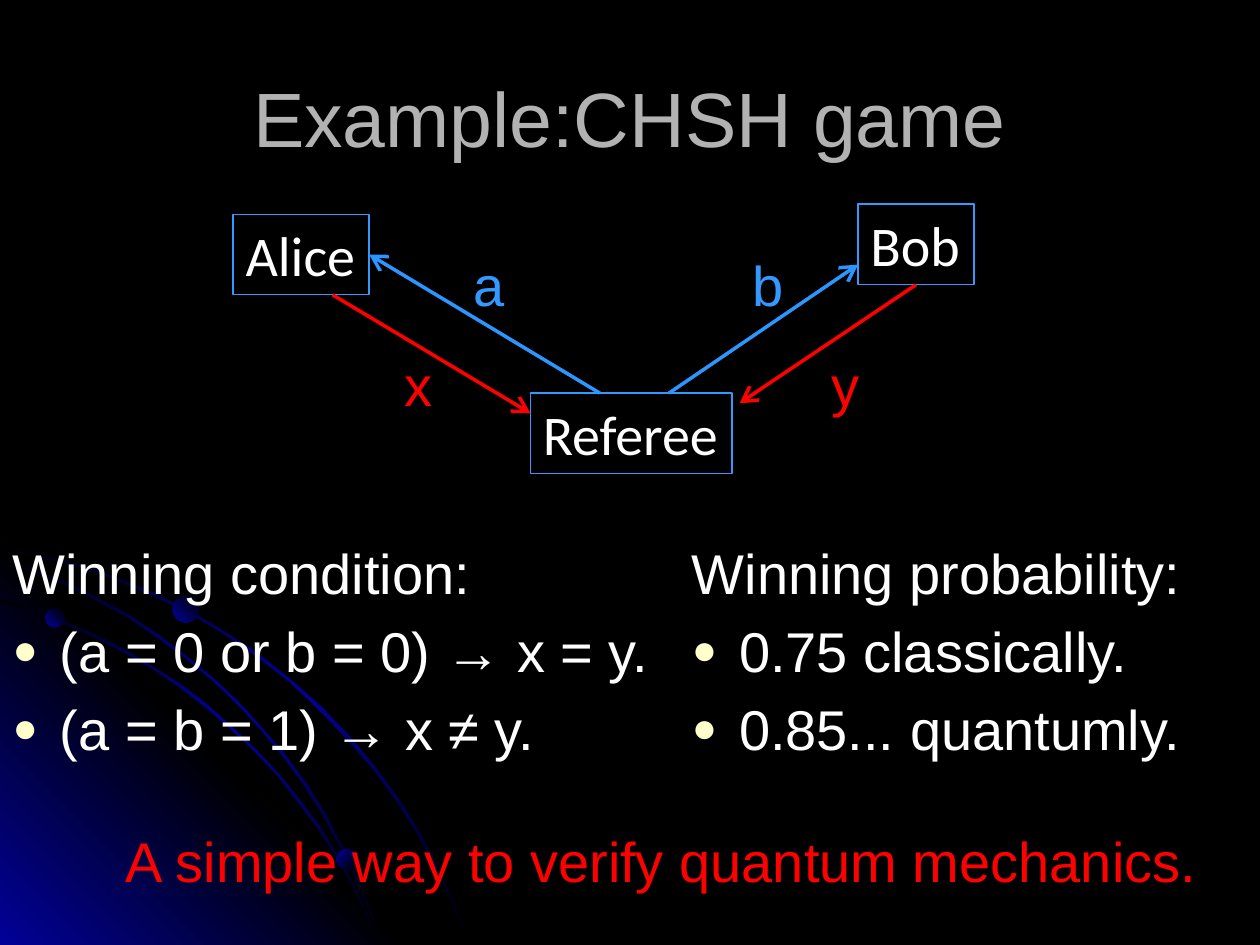
from copy import deepcopy
from dataclasses import dataclass
from math import acos, asin, cos, sin

from lxml.etree import SubElement
from pptx import Presentation
from pptx.dml.color import RGBColor as RGB
from pptx.enum.shapes import MSO_CONNECTOR as Connector, MSO_SHAPE as Preset
from pptx.enum.text import MSO_ANCHOR as Anchor, MSO_AUTO_SIZE as AutoSize, PP_ALIGN as Align
from pptx.oxml.ns import qn
from pptx.util import Pt

PX = 9144  # EMU per px, at 100 px to the inch
SLIDE_WIDTH, SLIDE_HEIGHT = 1000, 750


@dataclass(frozen=True)
class Theme:
    black: RGB = RGB(0, 0, 0)
    glow: RGB = RGB(0x01, 0x01, 0x99)
    title: RGB = RGB(0xB2, 0xB2, 0xB2)
    text: RGB = RGB(0xFF, 0xFF, 0xFF)
    blue: RGB = RGB(0x33, 0x99, 0xFF)
    arrow: RGB = RGB(0x2D, 0x95, 0xFE)
    red: RGB = RGB(0xFF, 0, 0)
    bullet: RGB = RGB(0xFF, 0xFF, 0xCC)
    title_size: Pt = Pt(44)
    text_size: Pt = Pt(32)
    font: str = "Arial"
    box_font: str = "Calibri"


theme = Theme()


def style_text(paragraph, color, size=theme.text_size, name=theme.font, align=Align.LEFT):
    paragraph.alignment = align
    font = paragraph.font
    font.name, font.size = name, size
    font.color.rgb = color


def place_decoration(shape, colors, angle):
    """Fill with evenly spaced gradient stops and put the shape behind the text."""
    shape.shadow.inherit = False
    shape.line.fill.background()
    shape.fill.gradient()
    shape.fill.gradient_angle = angle
    stops = shape.element.spPr.find(".//" + qn("a:gsLst"))
    while len(stops) < len(colors):
        stops.append(deepcopy(stops[0]))
    for index, (stop, color) in enumerate(zip(shape.fill.gradient_stops, colors)):
        stop.position = index / (len(colors) - 1)
        stop.color.rgb = color
    title.element.addprevious(shape.element)


presentation = Presentation()
presentation.slide_width, presentation.slide_height = SLIDE_WIDTH * PX, SLIDE_HEIGHT * PX
slide = presentation.slides.add_slide(presentation.slide_layouts[3])
slide.background.fill.solid()
slide.background.fill.fore_color.rgb = theme.black
shapes = slide.shapes
title = shapes.title

# Background outlines: each arc is a thin ring, cut by the left and bottom slide edges
ARC_STEPS, ARC_THICKNESS = 16, 2
arc_colors = (theme.black, theme.glow, theme.black)
corner_colors = (theme.glow, theme.black, theme.glow)
outlines = [([(0, 427), (322, SLIDE_HEIGHT), (0, SLIDE_HEIGHT)], corner_colors, 45)]
for center_x, center_y, outer_radius in ((-74, 900, 472), (-118, 910, 450), (-135, 879, 457)):
    edges = []
    for radius in (outer_radius, outer_radius - ARC_THICKNESS):
        start = acos(-center_x / radius)
        end = asin((center_y - SLIDE_HEIGHT) / radius)
        angles = [start + (end - start) * step / ARC_STEPS for step in range(ARC_STEPS + 1)]
        edges.append([(center_x + radius * cos(a), center_y - radius * sin(a)) for a in angles])
    outer_edge, inner_edge = edges
    outlines.append((outer_edge + inner_edge[::-1], arc_colors, 315))
outlines[0], outlines[1] = outlines[1], outlines[0]  # the outer arc lies behind the corner

for points, colors, angle in outlines:
    builder = shapes.build_freeform(*points[0], scale=PX)
    builder.add_line_segments(points[1:], close=True)
    place_decoration(builder.convert_to_shape(), colors, angle)

# Glowing dots on the arcs
for left, top, diameter, angle in ((36, 483, 15, 45), (267, 674, 16, 315), (137, 473, 21, 45)):
    dot = shapes.add_shape(Preset.OVAL, left * PX, top * PX, diameter * PX, diameter * PX)
    place_decoration(dot, (theme.glow, theme.black), angle)

# Title
title.left, title.top, title.width, title.height = 50 * PX, 30 * PX, 900 * PX, 125 * PX
title.text_frame.text = "Example:CHSH game"
title.text_frame.vertical_anchor = Anchor.MIDDLE
style_text(title.text_frame.paragraphs[0], theme.title, theme.title_size, align=Align.CENTER)

# Two lists, each with an unbulleted heading
for index, left, lines in (
    (1, 0, ("Winning condition:", "(a = 0 or b = 0) → x = y.", "(a = b = 1) → x ≠ y.")),
    (2, 539, ("Winning probability:", "0.75 classically.", "0.85... quantumly.")),
):
    body = slide.placeholders[index]
    body.left, body.top, body.width, body.height = left * PX, 422 * PX, 535 * PX, 260 * PX
    frame = body.text_frame
    frame.text = "\n".join(lines)
    frame.auto_size = AutoSize.NONE
    heading, *items = frame.paragraphs
    SubElement(heading._p.get_or_add_pPr(), qn("a:buNone"))
    for item in items:
        properties = item._p.get_or_add_pPr()
        bullet_color = SubElement(properties, qn("a:buClr"))
        SubElement(bullet_color, qn("a:srgbClr"), val=str(theme.bullet))
        SubElement(properties, qn("a:buSzPct"), val="75000")
        SubElement(properties, qn("a:buChar"), char="●")
    for paragraph in frame.paragraphs:
        style_text(paragraph, theme.text)

# Boxes for the players and the referee
BOX_HEIGHT, LABEL_HEIGHT = 64, 63
alice_left, alice_top, alice_width = 185, 170, 108
bob_left, bob_top, bob_width = 681, 162, 92
referee_left, referee_top, referee_width = 421, 312, 160
text_items = []
for text, left, top, width in (
    ("Alice", alice_left, alice_top, alice_width),
    ("Bob", bob_left, bob_top, bob_width),
    ("Referee", referee_left, referee_top, referee_width),
):
    box = shapes.add_shape(Preset.RECTANGLE, left * PX, top * PX, width * PX, BOX_HEIGHT * PX)
    box.shadow.inherit = False
    box.fill.background()
    box.line.color.rgb, box.line.width = theme.blue, Pt(0.75)
    text_items.append((box, text, theme.text, theme.box_font))

# Conclusion and arrow labels
question_top, answer_top = 194, 273
for text, left, top, width, color in (
    ("A simple way to verify quantum mechanics.", 90, 651, 871, theme.red),
    ("a", 366, question_top, 45, theme.blue),
    ("b", 587, question_top, 45, theme.blue),
    ("x", 311, answer_top, 42, theme.red),
    ("y", 650, answer_top, 42, theme.red),
):
    label = shapes.add_textbox(left * PX, top * PX, width * PX, LABEL_HEIGHT * PX)
    text_items.append((label, text, color, theme.font))

for shape, text, color, font_name in text_items:
    frame = shape.text_frame
    frame.text = text
    frame.word_wrap = False
    frame.auto_size = AutoSize.SHAPE_TO_FIT_TEXT
    frame.vertical_anchor = Anchor.TOP
    style_text(frame.paragraphs[0], color, name=font_name)

# Arrows between the boxes: questions in blue, answers in red
alice_side = (alice_left + alice_width, alice_top + BOX_HEIGHT // 2)
alice_bottom = (264, alice_top + BOX_HEIGHT)
bob_side = (bob_left, 210)
bob_bottom = (bob_left + bob_width // 2, bob_top + BOX_HEIGHT)
referee_side = (referee_left, 328)
for start, end, color in (
    ((476, referee_top), alice_side, theme.arrow),
    ((531, referee_top), bob_side, theme.arrow),
    (bob_bottom, (587, 320), theme.red),
    (alice_bottom, referee_side, theme.red),
):
    ends = [value * PX for value in start + end]
    arrow = shapes.add_connector(Connector.STRAIGHT, *ends)
    arrow.line.color.rgb, arrow.line.width = color, Pt(2)
    arrow_properties = arrow.element.spPr
    line = arrow_properties.find(qn("a:ln"))
    SubElement(line, qn("a:tailEnd"), type="arrow", w="lg", len="lg")
    SubElement(arrow_properties, qn("a:effectLst"))

presentation.save("out.pptx")
